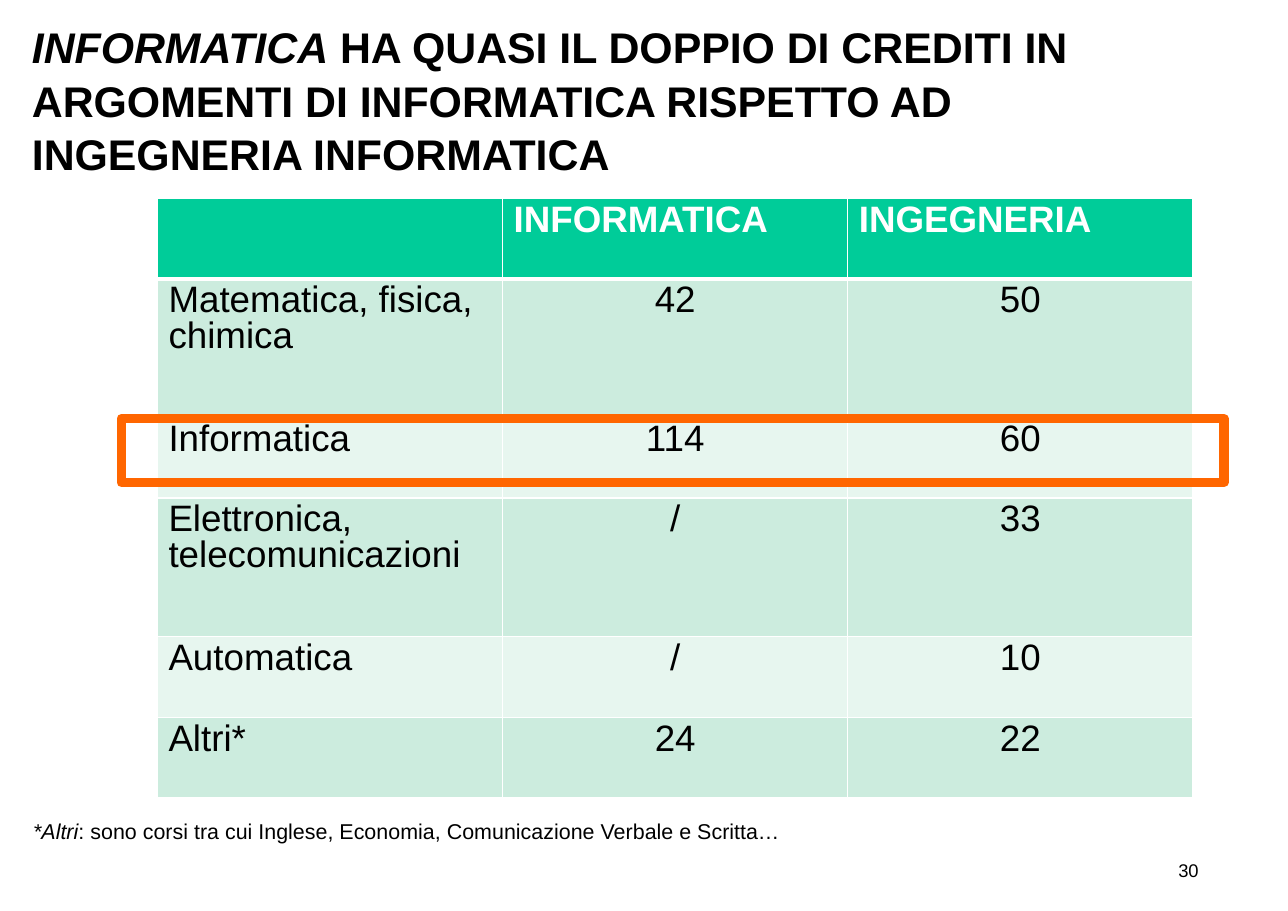
from lxml import etree
from pptx import Presentation
from pptx import util as u
from pptx.dml.color import RGBColor
from pptx.enum import shapes, text
from pptx.oxml.ns import qn

BLACK, WHITE, GREEN, ORANGE = "000000", "FFFFFF", "00CC99", "FF6600"
BANDS = ("CCECDE", "E7F6EF")
CREDITS = [
    ("", "INFORMATICA", "INGEGNERIA"),
    ("Matematica, fisica, chimica", "42", "50"),
    ("Informatica", "114", "60"),
    ("Elettronica, telecomunicazioni", "/", "33"),
    ("Automatica", "/", "10"),
    ("Altri*", "24", "22"),
]
SINGLE, DOUBLE = 8.83, 15.24
ROW_SHARES = (SINGLE, DOUBLE, SINGLE, DOUBLE, SINGLE, SINGLE)


def color(value):
    return RGBColor.from_string(value)


class Page:
    """One slide in Arial, with lengths given as percentages of its size."""

    def __init__(self, deck):
        self.width, self.height = deck.slide_width, deck.slide_height
        self.slide = deck.slides.add_slide(deck.slide_layouts[5])

    def across(self, share):
        return u.Emu(round(self.width * share / 100))

    def down(self, share):
        return u.Emu(round(self.height * share / 100))

    def area(self, left, top, width, height):
        return self.across(left), self.down(top), self.across(width), self.down(height)

    def add_words(self, paragraph, runs, size, ink=BLACK, bold=False, align="LEFT", spacing=1.0):
        paragraph.alignment = getattr(text.PP_ALIGN, align)
        paragraph.line_spacing = spacing
        for words, italic in runs:
            run = paragraph.add_run()
            run.text = words
            font = run.font
            font.name, font.size = "Arial", u.Pt(size)
            font.bold, font.italic = bold, italic
            font.color.rgb = color(ink)

    def frame(self, shape, inset=(0, 0), wrap=True):
        frame = shape.text_frame
        frame.margin_left = frame.margin_right = u.Inches(inset[0])
        frame.margin_top = frame.margin_bottom = u.Inches(inset[1])
        frame.vertical_anchor = text.MSO_ANCHOR.TOP
        frame.auto_size = text.MSO_AUTO_SIZE.NONE
        frame.word_wrap = wrap
        return frame.paragraphs[0]

    def title(self, place, runs):
        heading = self.slide.shapes.title
        heading.left, heading.top, heading.width, heading.height = self.area(*place)
        self.add_words(self.frame(heading), runs, 28, bold=True, spacing=1.04)

    def label(self, place, runs, size, align="LEFT", **layout):
        box = self.slide.shapes.add_textbox(*self.area(*place))
        self.add_words(self.frame(box, **layout), runs, size, align=align)

    def border(self, cell, side, points):
        properties = cell._tc.get_or_add_tcPr()
        line = etree.SubElement(properties, qn(f"a:ln{side}"), w=str(u.Pt(points)))
        fill = etree.SubElement(line, qn("a:solidFill"))
        etree.SubElement(fill, qn("a:srgbClr"), val=WHITE)

    def table(self, left, top, column, row_shares, rows):
        count = len(rows[0])
        place = self.area(left, top, column * count, sum(row_shares))
        grid = self.slide.shapes.add_table(len(rows), count, *place).table
        grid.first_row = grid.horz_banding = False
        for grid_column in grid.columns:
            grid_column.width = self.across(column)
        for r, (entries, share) in enumerate(zip(rows, row_shares)):
            grid.rows[r].height = self.down(share)
            for c, entry in enumerate(entries):
                self.cell(grid.cell(r, c), entry, r, c)

    def cell(self, cell, entry, r, c):
        header = r == 0
        for side in "LRTB":
            thick = (header and side == "B") or (r == 1 and side == "T")
            self.border(cell, side, 3 if thick else 1)
        cell.fill.solid()
        cell.fill.fore_color.rgb = color(GREEN if header else BANDS[(r - 1) % 2])
        if entry:
            self.add_words(cell.text_frame.paragraphs[0], [(entry, False)], 24,
                           ink=WHITE if header else BLACK, bold=header,
                           align="CENTER" if c and not header else "LEFT", spacing=0.87)

    def outline(self, place, ink, points):
        box = self.slide.shapes.add_shape(shapes.MSO_SHAPE.RECTANGLE, *self.area(*place))
        box.shadow.inherit = False
        box.fill.background()
        box.line.color.rgb = color(ink)
        box.line.width = u.Pt(points)


def main():
    deck = Presentation()
    deck.slide_width, deck.slide_height = u.Inches(11.69), u.Inches(8.27)
    page = Page(deck)
    page.label((73.48, 94.32, 19.59, 2.42), [("30", False)], 12, align="RIGHT")
    page.title((2.48, 2.06, 90.85, 16.93), [
        ("INFORMATICA", True),
        (" HA QUASI IL DOPPIO DI CREDITI IN ARGOMENTI DI INFORMATICA"
         " RISPETTO AD INGEGNERIA INFORMATICA", False),
    ])
    page.label((1.63, 89.12, 60.39, 4.23), [
        ("*Altri", True),
        (": sono corsi tra cui Inglese, Economia, Comunicazione Verbale e Scritta…", False),
    ], 14, inset=(0.11, 0.06), wrap=False)
    page.table(12.23, 21.77, 26.8, ROW_SHARES, CREDITS)
    page.outline((9.41, 45.95, 85.63, 7.01), ORANGE, 6)
    deck.save("out.pptx")


if __name__ == "__main__":
    main()
